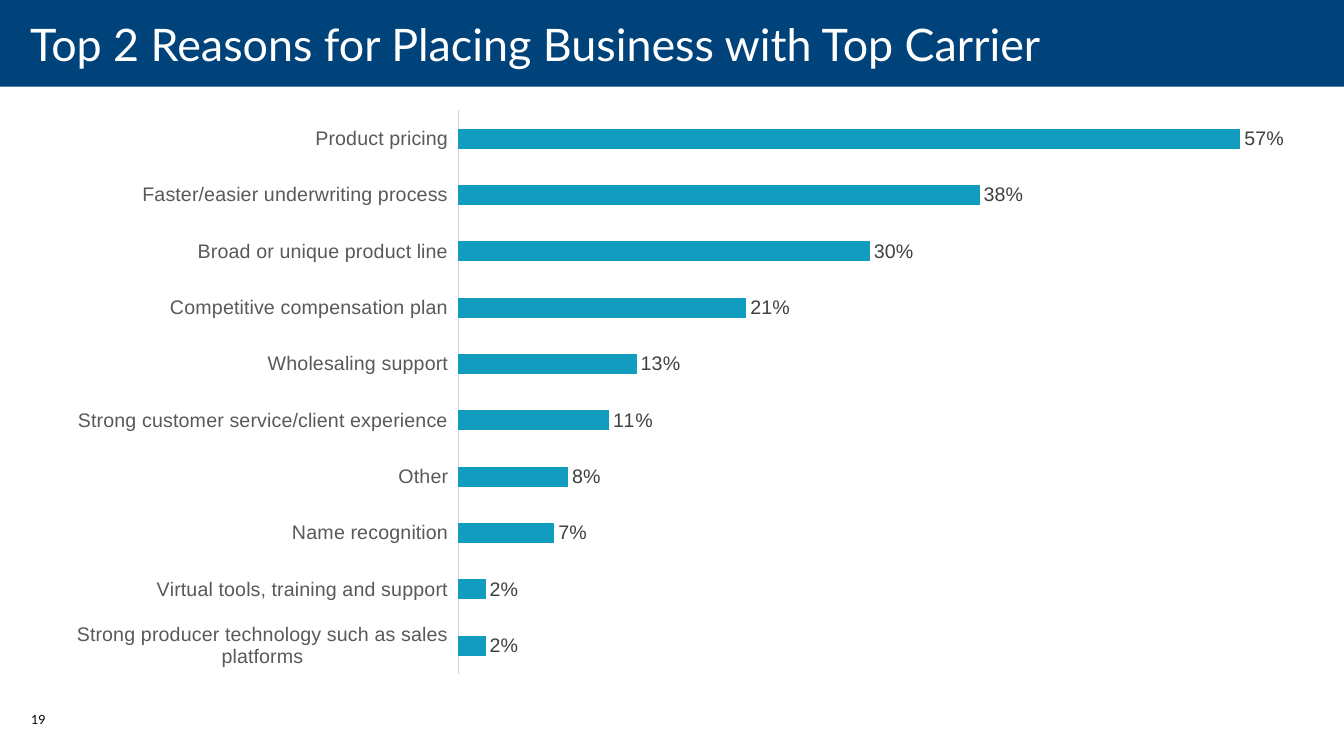
from dataclasses import dataclass

from lxml import etree
from pptx import Presentation
from pptx.chart.data import CategoryChartData
from pptx.dml.color import RGBColor
from pptx.enum.chart import XL_CHART_TYPE, XL_LABEL_POSITION, XL_TICK_LABEL_POSITION, XL_TICK_MARK
from pptx.enum.shapes import MSO_SHAPE
from pptx.enum.text import MSO_ANCHOR, MSO_AUTO_SIZE, PP_ALIGN
from pptx.oxml.ns import qn
from pptx.util import Inches, Pt

BAR = XL_CHART_TYPE.BAR_CLUSTERED
OUTSIDE_END = XL_LABEL_POSITION.OUTSIDE_END
LABELS_LOW = XL_TICK_LABEL_POSITION.LOW
NO_TICKS = XL_TICK_MARK.NONE
RECTANGLE = MSO_SHAPE.RECTANGLE
MIDDLE, TOP = MSO_ANCHOR.MIDDLE, MSO_ANCHOR.TOP
NO_AUTOFIT = MSO_AUTO_SIZE.NONE
LEFT = PP_ALIGN.LEFT

TITLE = "Top 2 Reasons for Placing Business with Top Carrier"
REASONS = {
    "Strong producer technology such as sales platforms": 0.02,
    "Virtual tools, training and support": 0.02,
    "Name recognition": 0.07,
    "Other": 0.08,
    "Strong customer service/client experience": 0.11,
    "Wholesaling support": 0.13,
    "Competitive compensation plan": 0.21,
    "Broad or unique product line": 0.30,
    "Faster/easier underwriting process": 0.38,
    "Product pricing": 0.57,
}


@dataclass(frozen=True)
class Theme:
    band: str = "00437B"
    bar: str = "129DC0"
    title: str = "FFFFFF"
    text: str = "000000"
    category: str = "595959"
    value: str = "404040"
    axis: str = "D9D9D9"
    heading_font: str = "Lato"
    chart_font: str = "Arial"
    title_size: int = 32
    chart_size: int = 10
    label_size: int = 14
    number_size: int = 9


def set_font(font, face, size, color):
    font.name = face
    font.size = Pt(size)
    font.color.rgb = RGBColor.from_string(color)


def write_text(frame, text, *, face, size, color, anchor=TOP, margins=(0.1, 0.05, 0.1, 0.05), wrap=True):
    frame.auto_size = NO_AUTOFIT
    frame.word_wrap = wrap
    frame.vertical_anchor = anchor
    frame.margin_left, frame.margin_top, frame.margin_right, frame.margin_bottom = map(Inches, margins)
    paragraph = frame.paragraphs[0]
    paragraph.alignment = LEFT
    run = paragraph.add_run()
    run.text = text
    set_font(run.font, face, size, color)


def place_plot(chart, x, y, w, h):
    plot_area = chart.plots[0]._element.getparent()
    for previous in plot_area.findall(qn("c:layout")):
        plot_area.remove(previous)
    layout = etree.Element(qn("c:layout"))
    manual = etree.SubElement(layout, qn("c:manualLayout"))
    settings = dict(layoutTarget="inner", xMode="edge", yMode="edge", x=x, y=y, w=w, h=h)
    for tag, value in settings.items():
        etree.SubElement(manual, qn(f"c:{tag}")).set("val", str(value))
    plot_area.insert(0, layout)


class SlideBuilder:
    def __init__(self, slide, theme):
        self.slide = slide
        self.theme = theme

    def title(self, text, box):
        heading = self.slide.shapes.title
        heading.left, heading.top, heading.width, heading.height = map(Inches, box)
        write_text(heading.text_frame, text, face=self.theme.heading_font, size=self.theme.title_size,
                   color=self.theme.title, anchor=MIDDLE, margins=(0.3, 0, 0.2, 0), wrap=False)

    def band(self, box):
        band = self.slide.shapes.add_shape(RECTANGLE, *map(Inches, box))
        band.shadow.inherit = False
        band.fill.solid()
        band.fill.fore_color.rgb = RGBColor.from_string(self.theme.band)
        band.line.fill.background()
        self.slide.shapes.title._element.addprevious(band._element)

    def page_number(self, text, box):
        number = self.slide.shapes.add_textbox(*map(Inches, box))
        write_text(number.text_frame, text, face=self.theme.heading_font,
                   size=self.theme.number_size, color=self.theme.text)

    def bar_chart(self, values, box):
        theme = self.theme
        data = CategoryChartData(number_format="0%")
        data.categories = list(values)
        data.add_series("Series 1", list(values.values()))
        chart = self.slide.shapes.add_chart(BAR, *map(Inches, box), data).chart
        chart.has_legend = False
        chart.has_title = False
        set_font(chart.font, theme.chart_font, theme.chart_size, theme.text)
        place_plot(chart, 0.321, 0, 0.666, 1)

        reasons = chart.category_axis
        reasons.major_tick_mark = reasons.minor_tick_mark = NO_TICKS
        reasons.tick_label_position = LABELS_LOW
        reasons.has_major_gridlines = False
        reasons.format.line.color.rgb = RGBColor.from_string(theme.axis)
        reasons.format.line.width = Pt(0.75)
        set_font(reasons.tick_labels.font, theme.chart_font, theme.label_size, theme.category)

        shares = chart.value_axis
        shares.minimum_scale, shares.maximum_scale = 0, 0.6
        shares.has_major_gridlines = False
        shares.visible = False

        plot = chart.plots[0]
        plot.gap_width = 182
        plot.vary_by_categories = False
        series = plot.series[0]
        series.format.fill.solid()
        series.format.fill.fore_color.rgb = RGBColor.from_string(theme.bar)
        labels = series.data_labels
        labels.show_value = True
        labels.position = OUTSIDE_END
        labels.number_format = "0%"
        labels.number_format_is_linked = False
        set_font(labels.font, theme.chart_font, theme.label_size, theme.value)


def main():
    """Build the slide on reasons for placing business with the top carrier."""
    presentation = Presentation()
    presentation.slide_width = Inches(13.33)
    presentation.slide_height = Inches(7.5)
    builder = SlideBuilder(presentation.slides.add_slide(presentation.slide_layouts[5]), Theme())
    builder.band((0, 0, 13.33, 0.86))
    builder.title(TITLE, (0, -0.05, 13.33, 0.97))
    builder.bar_chart(REASONS, (0.61, 1.09, 12.26, 5.6))
    builder.page_number("19", (0.21, 7.01, 0.49, 0.4))
    presentation.save("out.pptx")


if __name__ == "__main__":
    main()
